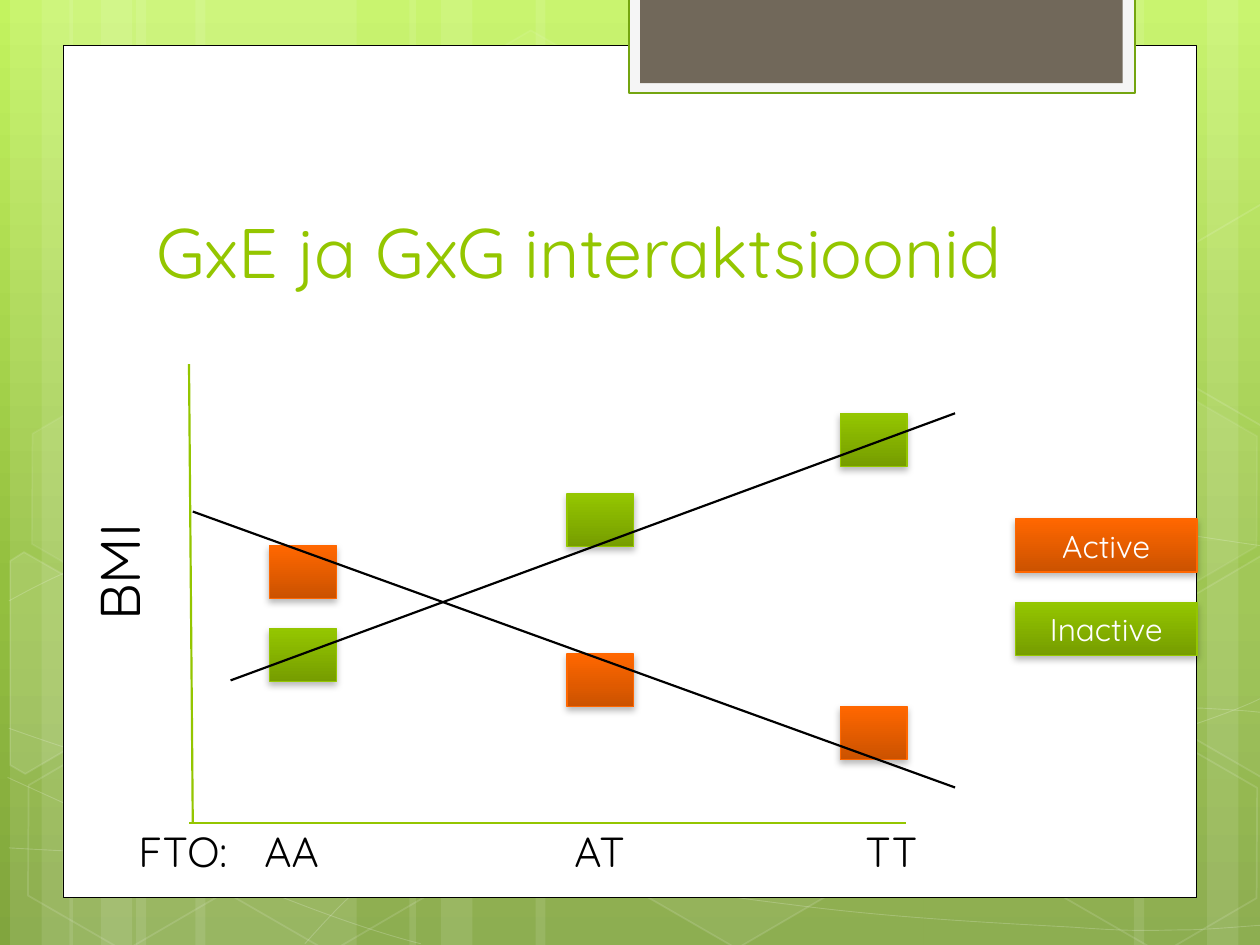
from dataclasses import dataclass
from math import cos, radians, sin

from lxml.etree import SubElement
from pptx import Presentation
from pptx.dml.color import RGBColor
from pptx.enum.shapes import MSO_CONNECTOR, MSO_SHAPE
from pptx.enum.text import MSO_ANCHOR as Anchor, MSO_AUTO_SIZE as AutoSize, PP_ALIGN as Align
from pptx.oxml import parse_xml
from pptx.oxml.ns import nsdecls, qn
from pptx.util import Inches, Pt


@dataclass(frozen=True)
class Theme:
    font: str = "Quicksand"
    title_size: int = 40
    axis_size: int = 32
    tick_size: int = 24
    legend_size: int = 18
    white: str = "FFFFFF"
    black: str = "000000"
    green: str = "94C600"
    tab_edge: str = "74A510"
    tab_rim: str = "F5F5F5"
    tab: str = "71685A"
    backdrop: tuple = ((0, "C3F35F"), (62, "93BF3F"), (100, "81A53E"))
    inactive: tuple = ((0, "94C600"), (100, "769D00"))
    active: tuple = ((0, "FF6700"), (100, "CB5200"))


@dataclass(frozen=True)
class Box:
    left: float
    top: float
    width: float
    height: float

    def inner(self, x, y, width, height):
        return Box(self.left + x, self.top + y, width, height)

    def emu(self):
        return [Inches(v) for v in (self.left, self.top, self.width, self.height)]


THEME = Theme()


# Formatting helpers
def set_alpha(color_parent, percent):
    for color in color_parent.iter(qn("a:srgbClr")):
        SubElement(color, qn("a:alpha")).set("val", str(percent * 1000))


def paint_gradient(fill, holder, stops):
    fill.solid()
    marks = "".join(f'<a:gs pos="{pos * 1000}"><a:srgbClr val="{color}"/></a:gs>' for pos, color in stops)
    gradient = parse_xml(f'<a:gradFill {nsdecls("a")} rotWithShape="1"><a:gsLst>{marks}</a:gsLst>'
                         '<a:lin ang="5400000" scaled="0"/></a:gradFill>')
    holder.replace(holder.find(qn("a:solidFill")), gradient)


def paint(shape, fill=None, fill_alpha=100, line=None, weight=1, line_alpha=100):
    shape.shadow.inherit = False
    for part, color, alpha, tag in ((shape.fill, fill, fill_alpha, "a:solidFill"),
                                    (shape.line.fill, line, line_alpha, "a:ln")):
        if not color:
            part.background()
            continue
        part.solid()
        part.fore_color.rgb = RGBColor.from_string(color)
        if alpha < 100:
            set_alpha(shape.element.spPr.find(qn(tag)), alpha)
    if line:
        shape.line.width = Pt(weight)


def style_text(frame, size, color, align=Align.LEFT):
    paragraph = frame.paragraphs[0]
    paragraph.alignment = align
    font = paragraph.runs[0].font
    font.name, font.size, font.color.rgb = THEME.font, Pt(size), RGBColor.from_string(color)


def add_rect(slide, box, **look):
    rect = slide.shapes.add_shape(MSO_SHAPE.RECTANGLE, *box.emu())
    paint(rect, **look)
    return rect


def add_line(slide, box, start, end, color):
    ends = [Inches(v) for x, y in (start, end) for v in (box.left + x, box.top + y)]
    line = slide.shapes.add_connector(MSO_CONNECTOR.STRAIGHT, *ends)
    line.line.color.rgb = RGBColor.from_string(color)
    line.line.width = Pt(1.25)
    SubElement(line.element.spPr, qn("a:effectLst"))


def add_outline(slide, points, close, **look):
    spots = [(Inches(x), Inches(y)) for x, y in points]
    builder = slide.shapes.build_freeform(*spots[0])
    builder.add_line_segments(spots[1:], close=close)
    outline = builder.convert_to_shape()
    paint(outline, **look)
    return outline


def add_curve(slide, start, *segments):
    """Each segment is x1, y1, x2, y2, x, y for a cubic or x, y for a straight line."""
    curve = add_outline(slide, [start, *(segment[-2:] for segment in segments)], False,
                        line=THEME.white, weight=0.5, line_alpha=20)
    for step, segment in zip(list(curve.element.iter(qn("a:lnTo"))), segments):
        if len(segment) == 6:
            step.tag = qn("a:cubicBezTo")
            step.clear()
            for x, y in zip(segment[::2], segment[1::2]):
                SubElement(step, qn("a:pt"), x=str(Inches(x) - curve.left), y=str(Inches(y) - curve.top))


def add_swatch(slide, box, stops):
    swatch = add_rect(slide, box, fill=stops[0][1], line=stops[0][1], weight=0.75)
    paint_gradient(swatch.fill, swatch.element.spPr, stops)
    shadow = SubElement(swatch.element.spPr.find(qn("a:effectLst")), qn("a:outerShdw"),
                        blurRad=str(Pt(4)), dist=str(Pt(2)), dir="5400000", rotWithShape="0")
    SubElement(shadow, qn("a:srgbClr"), val=THEME.black)
    set_alpha(shadow, 28)
    return swatch


# Backdrop: gradient, pale stripes, curves and hexagons
def add_backdrop(slide, box):
    paint_gradient(slide.background.fill, slide.element.find(".//" + qn("p:bgPr")), THEME.backdrop)
    left_stripes = [(x + shift, width) for shift in (0, 0.47)
                    for x, width in ((1.08, 1.75), (0.08, 0.5), (0.33, 0.83))]
    other_stripes = [(7.33, 1.75), (9.58, 0.5), (9, 0.83), (4.25, 3.08), (3.25, 0.5), (3.5, 0.83)]
    for x, width in left_stripes + other_stripes:
        add_rect(slide, box.inner(x, 0, width, box.height), fill=THEME.white, fill_alpha=10)
    curves = (
        ((0.07, 6.73), (0.61, 6.76, 1.15, 6.79, 1.9, 6.78), (2.65, 6.77, 3.58, 6.75, 4.58, 6.65),
         (5.58, 6.55, 7, 6.36, 7.92, 6.17), (8.83, 5.98, 9.77, 5.68, 10.07, 5.51)),
        ((0.07, 4.77), (0.36, 4.61, 0.65, 4.46, 1.21, 4.31), (1.78, 4.16, 2.59, 3.94, 3.47, 3.87),
         (4.36, 3.8, 5.44, 3.79, 6.54, 3.87), (7.64, 3.95, 9.47, 4.26, 10.07, 4.34)),
        ((0.06, 6.17), (1.27, 6.72, 2.47, 7.27, 3.34, 7.49)),
        ((0.07, 5.78), (0.38, 5.89, 0.7, 6, 1.28, 6.16), (1.86, 6.31, 2.73, 6.56, 3.57, 6.73),
         (4.4, 6.9, 5.45, 7.08, 6.28, 7.18), (7.11, 7.29, 8, 7.33, 8.53, 7.36),
         (9.05, 7.4, 9.19, 7.38, 9.45, 7.38), (9.71, 7.37, 9.89, 7.35, 10.07, 7.34)),
        ((2.42, 7.49), (2.6, 7.29, 2.78, 7.09, 3.02, 6.91), (3.26, 6.73, 3.6, 6.53, 3.88, 6.39),
         (4.16, 6.25, 4.33, 6.19, 4.7, 6.09), (5.06, 5.99, 5.73, 5.85, 6.08, 5.78),
         (6.44, 5.71, 6.49, 5.71, 6.8, 5.69), (7.11, 5.66, 7.6, 5.63, 7.94, 5.62),
         (8.29, 5.61, 8.86, 5.62, 8.86, 5.62), (9.53, 5.62),
         (9.71, 5.63, 9.88, 5.64, 9.97, 5.65), (10.06, 5.66, 10.03, 5.65, 10.06, 5.66)))
    for curve in curves:
        add_curve(slide, *curve)

    hexagons = ((3.34, 0.36, 4, 8), (4.97, 5.89, 6, 12), (0.11, 5.91, 0, 12), (0.14, 3.12, 7, 8),
                (1.74, 5.92, 0, 12), (7.53, 4.53, 10, 12), (8.34, 5.93, 0, 12), (8.34, 3.14, 7, 8))
    for x, y, fill_alpha, line_alpha in hexagons:
        hexagon = slide.shapes.add_shape(MSO_SHAPE.HEXAGON, *box.inner(x, y, 1.75, 1.52).emu())
        hexagon.adjustments[0], hexagon.adjustments[1] = 0.285, 1.155
        hexagon.rotation = 30
        paint(hexagon, fill_alpha and THEME.white, fill_alpha, THEME.white, 1, line_alpha)

    # Hexagons cut by the slide edges, turned about their centres
    left_cut = [(0.08, 4.45), (0.19, 4.38), (0.96, 4.82), (0.95, 5.7), (0.2, 6.14), (0.08, 6.07)]
    right_cut = [(9.26, 4.85), (10.01, 4.41), (10.09, 4.46), (10.09, 6.13), (10.02, 6.17), (9.26, 5.73)]
    upper_cut = [(x, y - 2.79) for x, y in right_cut]
    c, s = cos(radians(30)), sin(radians(30))
    for points, mid_x, mid_y, alpha in ((left_cut, 0.36, 5.35, 10), (right_cut, 9.85, 5.2, 4),
                                        (upper_cut, 9.85, 2.41, 0)):
        upright = [(mid_x + (x - mid_x) * c + (y - mid_y) * s, mid_y - (x - mid_x) * s + (y - mid_y) * c)
                   for x, y in points]
        add_outline(slide, upright, True, fill=alpha and THEME.white, fill_alpha=alpha,
                    line=THEME.white, line_alpha=12).rotation = 30


# White page with the tab hanging from the top
def add_page(slide, box):
    add_rect(slide, box, fill=THEME.white, line=THEME.black, weight=0.5)
    add_rect(slide, box.inner(4.49, -0.38, 4.02, 0.76), fill=THEME.tab_rim, line=THEME.tab_edge, weight=1.25)
    add_rect(slide, box.inner(4.58, -0.38, 3.83, 0.68), fill=THEME.tab)


def add_title(slide, box):
    title, frame = slide.shapes.title, slide.shapes.title.text_frame
    title.element.getparent().append(title.element)  # in front of the page
    title.left, title.top, title.width, title.height = box.emu()
    frame.text = "GxE ja GxG interaktsioonid"
    frame.vertical_anchor, frame.auto_size = Anchor.BOTTOM, AutoSize.NONE
    style_text(frame, THEME.title_size, THEME.green)


def add_label(slide, box, text, size, wrap):
    label = slide.shapes.add_textbox(*box.emu())
    label.text_frame.text, label.text_frame.word_wrap = text, wrap
    style_text(label.text_frame, size, THEME.black)
    return label


# Interaction plot: axes, markers, labels and trend lines
def add_plot(slide, box):
    add_line(slide, box, (0, 0), (0.03, box.height), THEME.green)
    add_line(slide, box, (box.width, box.height), (0, box.height), THEME.green)
    for stops, heights in ((THEME.inactive, (2.1, 1.03, 0.39)), (THEME.active, (1.44, 2.3, 2.72))):
        for x, y in zip((0.64, 3, 5.17), heights):
            add_swatch(slide, box.inner(x, y, 0.53, 0.42), stops)
    genotypes = add_label(slide, box.inner(-1.5, 3.61, 9.32, 0.5), "\tFTO:\tAA\tAT\tTT", THEME.tick_size, True)
    tabs = SubElement(genotypes.text_frame.paragraphs[0]._p.get_or_add_pPr(), qn("a:tabLst"))
    for stop in (1, 2, 4.46, 6.77):
        SubElement(tabs, qn("a:tab"), pos=str(Inches(stop)), algn="l")
    add_label(slide, box.inner(-1.04, 1.33, 0.97, 0.64), "BMI", THEME.axis_size, False).rotation = 270
    add_line(slide, box, (0.03, 1.17), (6.08, 3.36), THEME.black)
    add_line(slide, box, (0.33, 2.51), (6.08, 0.39), THEME.black)


def add_legend(slide, box):
    for row, (name, stops) in enumerate((("Active", THEME.active), ("Inactive", THEME.inactive))):
        key = add_swatch(slide, box.inner(0, row * 0.66, box.width, 0.42), stops)
        key.text_frame.text, key.text_frame.vertical_anchor = name, Anchor.MIDDLE
        style_text(key.text_frame, THEME.legend_size, THEME.white, Align.CENTER)


def main():
    deck = Presentation()
    deck.slide_width, deck.slide_height = Inches(10), Inches(7.5)
    slide = deck.slides.add_slide(deck.slide_layouts[5])
    add_backdrop(slide, Box(0, 0, 10, 7.5))
    add_page(slide, Box(0.5, 0.36, 9, 6.76))
    add_title(slide, Box(1.14, 1.12, 7.68, 1.25))
    add_plot(slide, Box(1.5, 2.89, 5.69, 3.64))
    add_legend(slide, Box(8.06, 4.12, 1.44, 1.08))
    deck.save("out.pptx")


if __name__ == "__main__":
    main()
